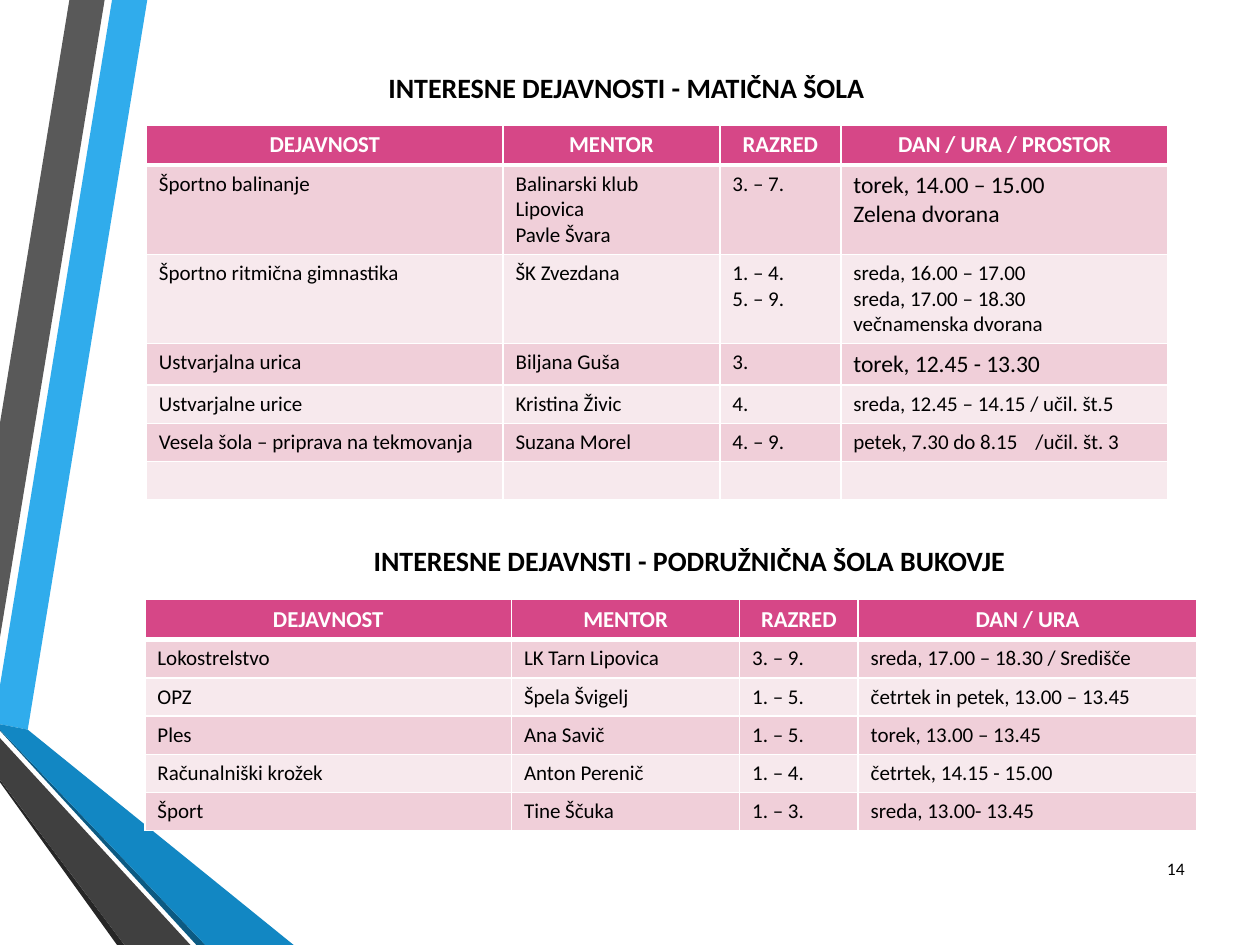
from lxml import etree
from pptx import Presentation
from pptx import util as u
from pptx.dml.color import RGBColor
from pptx.enum import text
from pptx.oxml import ns

WHITE = RGBColor(0xFF, 0xFF, 0xFF)
BLACK = RGBColor(0x00, 0x00, 0x00)
PINK = RGBColor(0xD6, 0x47, 0x87)
ROSE = RGBColor(0xF0, 0xCF, 0xD9)
BLUSH = RGBColor(0xF7, 0xE9, 0xED)
SKY = RGBColor(0x30, 0xAC, 0xEC)
BLUE = RGBColor(0x12, 0x87, 0xC3)
NAVY = RGBColor(0x0C, 0x5A, 0x82)
GREY = RGBColor(0x59, 0x59, 0x59)
COAL = RGBColor(0x40, 0x40, 0x40)
SOOT = RGBColor(0x26, 0x26, 0x26)

LEFT, MID, RIGHT = text.PP_ALIGN.LEFT, text.PP_ALIGN.CENTER, text.PP_ALIGN.RIGHT

BANDS = [
    (SKY, [(0, 13.82), (0, 14.6), (0.56, 14.71), (2.97, 0), (2.26, 0)]),
    (GREY, [(2.11, 0), (1.4, 0), (0, 8.53), (0, 12.85)]),
    (SOOT, [(0, 15.72), (0, 15.77), (2.36, 19.05), (2.51, 19.05)]),
    (NAVY, [(0, 14.71), (0, 14.73), (3.96, 19.05), (4.14, 19.05)]),
    (BLUE, [(0, 14.71), (4.14, 19.05), (5.92, 19.05), (0.56, 14.71), (0, 14.6)]),
    (COAL, [(0, 15.72), (2.51, 19.05), (3.84, 19.05), (0, 14.88)]),
]

MAIN = [
    ["DEJAVNOST", "MENTOR", "RAZRED", "DAN / URA / PROSTOR"],
    ["Športno balinanje", "Balinarski klub Lipovica\nPavle Švara", "3. – 7.",
     "torek, 14.00 – 15.00\nZelena dvorana"],
    ["Športno ritmična gimnastika", "ŠK Zvezdana", "1. – 4.\n5. – 9.",
     "sreda, 16.00 – 17.00\nsreda, 17.00 – 18.30\nvečnamenska dvorana"],
    ["Ustvarjalna urica", "Biljana Guša", "3.", "torek, 12.45 - 13.30"],
    ["Ustvarjalne urice", "Kristina Živic", "4.", "sreda, 12.45 – 14.15 / učil. št.5"],
    ["Vesela šola – priprava na tekmovanja", "Suzana Morel", "4. – 9.",
     "petek, 7.30 do 8.15\t/učil. št. 3"],
    ["", "", "", ""],
]

BRANCH = [
    ["DEJAVNOST", "MENTOR", "RAZRED", "DAN / URA"],
    ["Lokostrelstvo", "LK Tarn Lipovica", "3. – 9.", "sreda, 17.00 – 18.30 / Središče"],
    ["OPZ", "Špela Švigelj", "1. – 5.", "četrtek in petek, 13.00 – 13.45"],
    ["Ples", "Ana Savič", "1. – 5.", "torek, 13.00 – 13.45"],
    ["Računalniški krožek", "Anton Perenič", "1. – 4.", "četrtek, 14.15 - 15.00"],
    ["Šport", "Tine Ščuka", "1. – 3.", "sreda, 13.00- 13.45"],
]


def put(frame, words, size=12, color=BLACK, bold=False, align=LEFT, space=None, tab=3.67):
    for i, line in enumerate(words.split("\n")):
        para = frame.add_paragraph() if i else frame.paragraphs[0]
        para.alignment = align
        if space:
            para.line_spacing = space
        if not line:
            etree.SubElement(para._p, ns.qn("a:endParaRPr"), sz=str(size * 100))
            continue
        if "\t" in line:
            props = para._p.get_or_add_pPr()
            stops = etree.SubElement(props, ns.qn("a:tabLst"))
            etree.SubElement(stops, ns.qn("a:tab"), pos=str(u.Cm(tab)), algn="l")
        run = para.add_run()
        run.text = line
        run.font.name = "Calibri"
        run.font.size = u.Pt(size)
        run.font.bold = bold
        run.font.color.rgb = color


def edge(cell, low):
    props = cell._tc.get_or_add_tcPr()
    for side, width in (("L", 1), ("R", 1), ("T", 1), ("B", low)):
        line = etree.SubElement(props, ns.qn("a:ln" + side), w=str(u.Pt(width)))
        fill = etree.SubElement(line, ns.qn("a:solidFill"))
        etree.SubElement(fill, ns.qn("a:srgbClr"), val=str(WHITE))


class Page:
    def __init__(self, deck):
        self.slide = deck.slides.add_slide(deck.slide_layouts[6])
        self.items = self.slide.shapes

    def band(self, color, points):
        spots = [(u.Cm(x), u.Cm(y)) for x, y in points]
        pen = self.items.build_freeform(*spots[0])
        pen.add_line_segments(spots[1:])
        shape = pen.convert_to_shape()
        shape.shadow.inherit = False
        shape.fill.solid()
        shape.fill.fore_color.rgb = color
        shape.line.fill.background()

    def label(self, words, x, y, w, h, anchor=text.MSO_ANCHOR.TOP, **style):
        frame = self.items.add_textbox(u.Cm(x), u.Cm(y), u.Cm(w), u.Cm(h)).text_frame
        frame.word_wrap = True
        frame.vertical_anchor = anchor
        put(frame, words, **style)

    def title(self, words, x, y):
        self.label(words, x, y, 21.9, 1.12, size=16, bold=True, align=MID, space=0.9)

    def grid(self, data, x, y, widths, heights, large=()):
        frame = self.items.add_table(len(data), len(widths), u.Cm(x), u.Cm(y),
                                     u.Cm(sum(widths)), u.Cm(sum(heights)))
        table = frame.table
        for col, width in zip(table.columns, widths):
            col.width = u.Cm(width)
        for r, (row, height) in enumerate(zip(data, heights)):
            table.rows[r].height = u.Cm(height)
            for c, words in enumerate(row):
                cell = table.cell(r, c)
                edge(cell, 1 if r else 3)
                cell.fill.solid()
                if r:
                    cell.fill.fore_color.rgb = ROSE if r % 2 else BLUSH
                    put(cell.text_frame, words, size=13.5 if (r, c) in large else 12)
                else:
                    cell.fill.fore_color.rgb = PINK
                    put(cell.text_frame, words, size=13, color=WHITE, bold=True, align=MID)


def main():
    deck = Presentation()
    deck.slide_width, deck.slide_height = u.Cm(25.4), u.Cm(19.05)
    page = Page(deck)
    for color, points in BANDS:
        page.band(color, points)
    page.title("INTERESNE DEJAVNOSTI - MATIČNA ŠOLA", 1.68, 1.37)
    page.grid(MAIN, 2.95, 2.52, [7.19, 4.37, 2.44, 6.6],
              [0.8, 1.8, 1.8, 0.84, 0.77, 0.77, 0.77], large=[(1, 3), (3, 3)])
    page.label("14", 22.99, 16.99, 1.14, 1.02, text.MSO_ANCHOR.MIDDLE, size=10, align=RIGHT)
    page.title("INTERESNE DEJAVNSTI - PODRUŽNIČNA ŠOLA BUKOVJE", 2.95, 10.9)
    page.grid(BRANCH, 2.92, 12.09, [7.39, 4.6, 2.39, 6.83], [0.8] + [0.77] * 5)
    deck.save("out.pptx")


if __name__ == "__main__":
    main()
